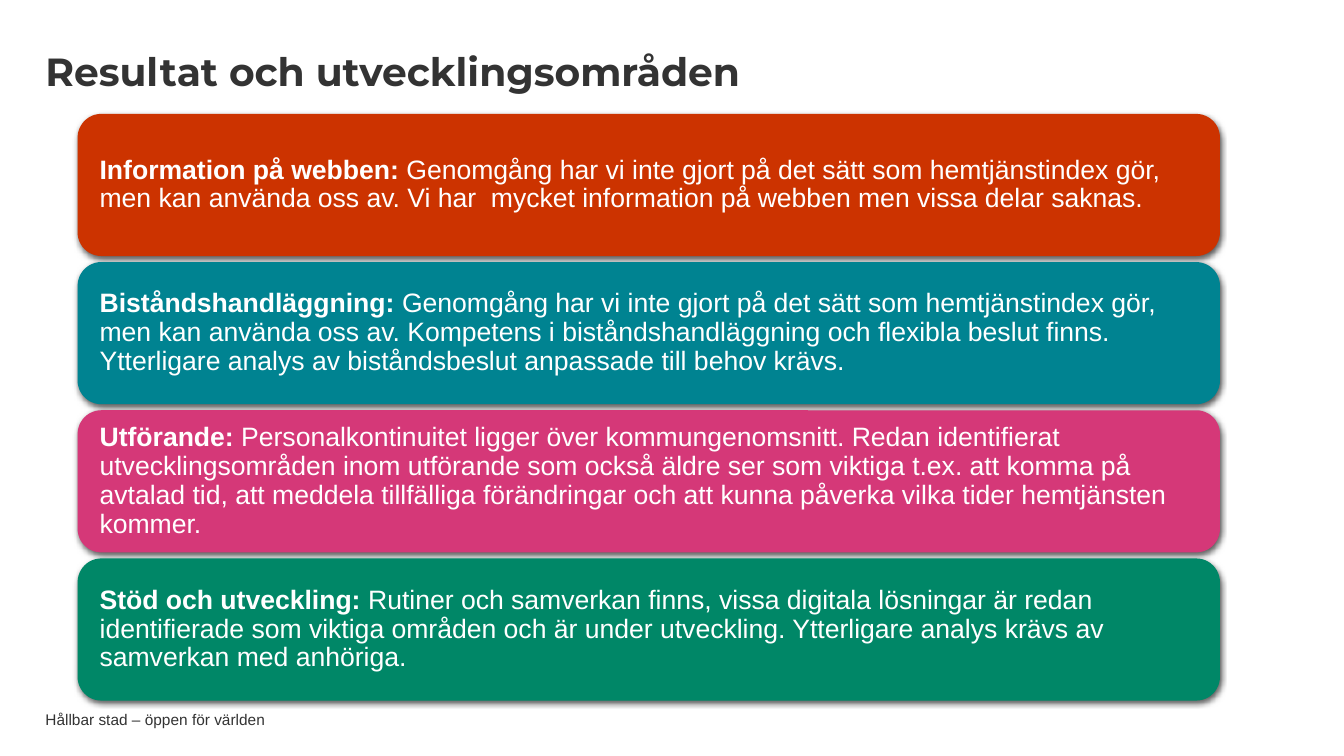
from dataclasses import dataclass

from lxml import etree
from pptx import Presentation
from pptx import util as u
from pptx.dml.color import RGBColor
from pptx.enum import shapes, text
from pptx.oxml.ns import qn

EMU_PER_PX = 9144  # 100 px to the inch

WHITE = RGBColor(0xFF, 0xFF, 0xFF)
CHARCOAL = RGBColor(0x33, 0x33, 0x33)
RED = RGBColor(0xCC, 0x33, 0x00)
TEAL = RGBColor(0x00, 0x83, 0x91)
PINK = RGBColor(0xD5, 0x38, 0x78)
GREEN = RGBColor(0x00, 0x87, 0x67)

CARD_LEFT, CARD_TOP, CARD_WIDTH, CARD_HEIGHT = 77, 113, 1133, 141
CARD_PITCH = 147
CARD_INSET = 15


@dataclass(frozen=True)
class Label:
    left: int
    top: int
    width: int
    height: int
    words: str
    font: str
    size: int
    bold: bool = False
    line_spacing: float = 1.0


@dataclass(frozen=True)
class Card:
    heading: str
    body: str
    color: RGBColor


LABELS = [
    Label(45, 706, 945, 16, "Hållbar stad – öppen för världen", "Arial", 11),
    Label(45, 21, 1003, 104, "Resultat och utvecklingsområden", "Montserrat", 28, True, 0.9),
]

CARDS = [
    Card("Information på webben: ",
         "Genomgång har vi inte gjort på det sätt som hemtjänstindex gör, men kan "
         "använda oss av. Vi har  mycket information på webben men vissa delar saknas.",
         RED),
    Card("Biståndshandläggning: ",
         "Genomgång har vi inte gjort på det sätt som hemtjänstindex gör, men kan "
         "använda oss av. Kompetens i biståndshandläggning och flexibla beslut finns. "
         "Ytterligare analys av biståndsbeslut anpassade till behov krävs.",
         TEAL),
    Card("Utförande: ",
         "Personalkontinuitet ligger över kommungenomsnitt. Redan identifierat "
         "utvecklingsområden inom utförande som också äldre ser som viktiga t.ex. att "
         "komma på avtalad tid, att meddela tillfälliga förändringar och att kunna "
         "påverka vilka tider hemtjänsten kommer.",
         PINK),
    Card("Stöd och utveckling: ",
         "Rutiner och samverkan finns, vissa digitala lösningar är redan identifierade "
         "som viktiga områden och är under utveckling. Ytterligare analys krävs av "
         "samverkan med anhöriga.",
         GREEN),
]


def px(length: int) -> u.Emu:
    return u.Emu(length * EMU_PER_PX)


def prepare_frame(frame, inset: int) -> None:
    """Wrap, centre vertically and set the same inset on all sides."""
    frame.word_wrap = True
    frame.vertical_anchor = text.MSO_ANCHOR.MIDDLE
    frame.margin_left = frame.margin_right = px(inset)
    frame.margin_top = frame.margin_bottom = px(inset)


def style_paragraph(paragraph, font: str, size: int, color: RGBColor,
                    line_spacing: float) -> None:
    paragraph.alignment = text.PP_ALIGN.LEFT
    paragraph.line_spacing = line_spacing
    paragraph.font.name = font
    paragraph.font.size = u.Pt(size)
    paragraph.font.color.rgb = color


def add_soft_shadow(shape) -> None:
    """Put a blurred black shadow just below the shape."""
    shape.shadow.inherit = False
    effects = shape.element.spPr.find(qn("a:effectLst"))
    shadow = etree.SubElement(effects, qn("a:outerShdw"), blurRad=str(u.Pt(4.5)),
                              dist=str(u.Pt(1.5)), dir="5400000", rotWithShape="0")
    color = etree.SubElement(shadow, qn("a:srgbClr"), val="000000")
    etree.SubElement(color, qn("a:alpha"), val="63000")


def draw_label(slide, label: Label) -> None:
    box = slide.shapes.add_textbox(px(label.left), px(label.top),
                                   px(label.width), px(label.height))
    prepare_frame(box.text_frame, 0)
    paragraph = box.text_frame.paragraphs[0]
    paragraph.text = label.words
    style_paragraph(paragraph, label.font, label.size, CHARCOAL, label.line_spacing)
    paragraph.font.bold = label.bold


def draw_card(slide, card: Card, top: int) -> None:
    shape = slide.shapes.add_shape(shapes.MSO_SHAPE.ROUNDED_RECTANGLE, px(CARD_LEFT),
                                   px(top), px(CARD_WIDTH), px(CARD_HEIGHT))
    shape.fill.solid()
    shape.fill.fore_color.rgb = card.color
    shape.line.fill.background()
    add_soft_shadow(shape)
    prepare_frame(shape.text_frame, CARD_INSET)
    paragraph = shape.text_frame.paragraphs[0]
    style_paragraph(paragraph, "Arial", 19, WHITE, 0.9)
    for words, bold in ((card.heading, True), (card.body, False)):
        run = paragraph.add_run()
        run.text = words
        run.font.bold = bold


def main() -> None:
    presentation = Presentation()
    presentation.slide_width = px(1333)
    presentation.slide_height = px(750)
    slide = presentation.slides.add_slide(presentation.slide_layouts[6])
    for label in LABELS:
        draw_label(slide, label)
    for row, card in enumerate(CARDS):
        draw_card(slide, card, CARD_TOP + row * CARD_PITCH)
    presentation.save("out.pptx")


if __name__ == "__main__":
    main()
